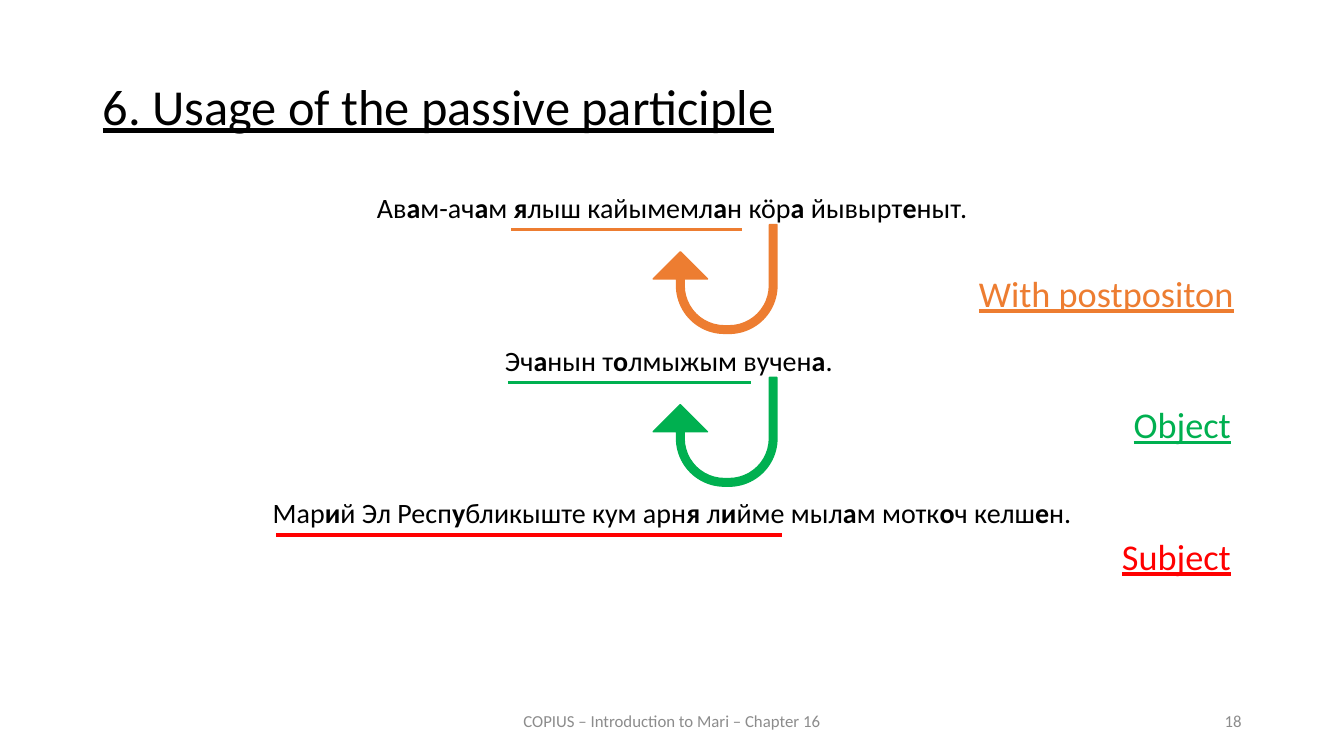
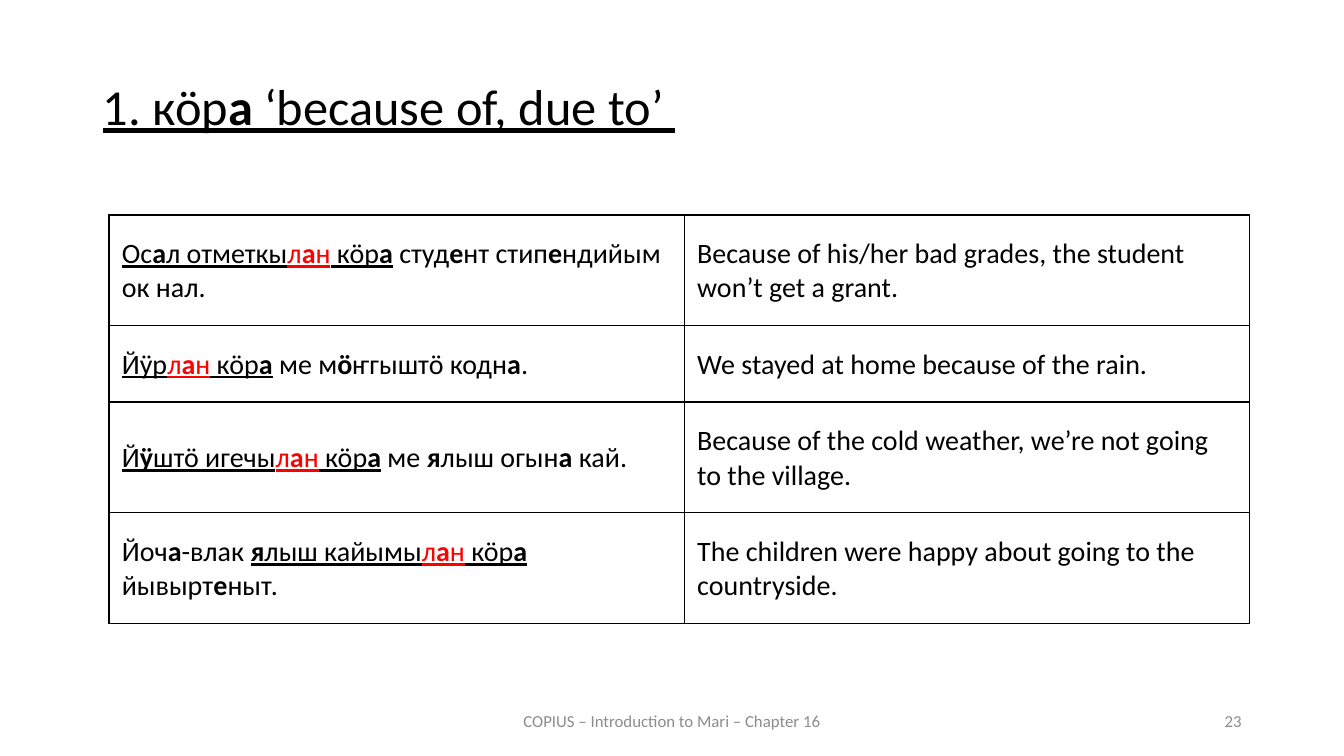
import itertools

import pptx
import pptx.dml.color
import pptx.enum.shapes
import pptx.enum.text
import pptx.oxml
import pptx.oxml.ns
import pptx.util
from pptx.util import Cm

RGBColor = pptx.dml.color.RGBColor
Align = pptx.enum.text.PP_ALIGN
Anchor = pptx.enum.text.MSO_ANCHOR

BLACK = RGBColor(0x00, 0x00, 0x00)
GREY = RGBColor(0x8C, 0x8C, 0x8C)
ORANGE = RGBColor(0xED, 0x7D, 0x31)
GREEN = RGBColor(0x00, 0xB0, 0x50)
RED = RGBColor(0xFF, 0x00, 0x00)

FONT = "Calibri"
SLIDE_WIDTH, SLIDE_HEIGHT = 33.87, 19.05
FOOTER = "COPIUS – Introduction to Mari – Chapter 16"
MARKS = "*_^"


def write_text(frame, text, *, size=20, color=BLACK, align=Align.LEFT,
               underline=False, line_spacing=None):
    """Fill a frame; * toggles bold, _ underline and ^ red."""
    paragraph = frame.paragraphs[0]
    paragraph.alignment = align
    if line_spacing:
        paragraph.line_spacing = line_spacing
    active = set()
    for is_mark, group in itertools.groupby(text, key=lambda c: c in MARKS):
        if is_mark:
            active ^= set(group)
            continue
        run = paragraph.add_run()
        run.text = "".join(group)
        run.font.name = FONT
        run.font.size = pptx.util.Pt(size)
        run.font.bold = "*" in active
        run.font.underline = underline or "_" in active
        run.font.color.rgb = RED if "^" in active else color


class Deck:
    def __init__(self):
        self.presentation = pptx.Presentation()
        self.presentation.slide_width = Cm(SLIDE_WIDTH)
        self.presentation.slide_height = Cm(SLIDE_HEIGHT)
        self.slide = None

    def new_slide(self, title, number):
        """Start a slide with the shared title and footer."""
        self.slide = self.presentation.slides.add_slide(
            self.presentation.slide_layouts[6])
        self.text(title, 2.34, 1.93, 29.21, 2.1, size=36, underline=True,
                  align=Align.JUSTIFY, line_spacing=0.9)
        footer = dict(size=12, color=GREY, anchor=Anchor.MIDDLE)
        self.text(FOOTER, 11.22, 17.65, 11.43, 1.02, align=Align.CENTER, **footer)
        self.text(str(number), 23.92, 17.65, 7.62, 1.02, align=Align.RIGHT, **footer)

    def text(self, text, left, top, width, height, *, anchor=Anchor.TOP, **style):
        box = self.slide.shapes.add_textbox(Cm(left), Cm(top), Cm(width), Cm(height))
        box.text_frame.word_wrap = True
        box.text_frame.vertical_anchor = anchor
        write_text(box.text_frame, text, **style)

    def underline(self, start, end, y, color):
        rule = self.slide.shapes.add_connector(
            pptx.enum.shapes.MSO_CONNECTOR.STRAIGHT, Cm(start), Cm(y), Cm(end), Cm(y))
        rule.line.color.rgb = color
        rule.line.width = pptx.util.Pt(2.25)
        rule._element.spPr.append(pptx.oxml.parse_xml(
            f"<a:effectLst {pptx.oxml.ns.nsdecls('a')}/>"))

    def return_arrow(self, left, top, color):
        arrow = self.slide.shapes.add_shape(
            pptx.enum.shapes.MSO_SHAPE.U_TURN_ARROW,
            Cm(left), Cm(top), Cm(3.12), Cm(2.74))
        for index, value in enumerate((0.07, 0.25, 0.25, 0.44, 0.75)):
            arrow.adjustments[index] = value
        arrow.rotation = 180
        arrow.shadow.inherit = False
        arrow.fill.solid()
        arrow.fill.fore_color.rgb = color
        arrow.line.color.rgb = color
        arrow.line.width = pptx.util.Pt(1)

    def table(self, rows, left, top, widths, heights):
        table = self.slide.shapes.add_table(
            len(rows), len(widths), Cm(left), Cm(top),
            Cm(sum(widths)), Cm(sum(heights))).table
        table.first_row = table.horz_banding = False
        for column, width in zip(table.columns, widths):
            column.width = Cm(width)
        for row, height in zip(table.rows, heights):
            row.height = Cm(height)
        last_row, last_column = len(rows) - 1, len(widths) - 1
        for r, row in enumerate(rows):
            for c, text in enumerate(row):
                cell = table.cell(r, c)
                cell.fill.background()
                cell.vertical_anchor = Anchor.MIDDLE
                cell.margin_left = cell.margin_right = Cm(0.33)
                cell.margin_top, cell.margin_bottom = Cm(0.05), Cm(0)
                write_text(cell.text_frame, text)
                self.borders(cell, L=c == 0, R=c == last_column,
                             T=r == 0, B=r == last_row)

    def borders(self, cell, **outer_sides):
        """Draw outer sides at 1.5 pt and inner ones at 1 pt."""
        properties = cell._tc.get_or_add_tcPr()
        for index, (side, is_outer) in enumerate(outer_sides.items()):
            width = pptx.util.Pt(1.5 if is_outer else 1)
            properties.insert(index, pptx.oxml.parse_xml(
                f"<a:ln{side} {pptx.oxml.ns.nsdecls('a')} w='{width}'>"
                f"<a:solidFill><a:srgbClr val='{BLACK}'/></a:solidFill></a:ln{side}>"))


def participle_slide(deck):
    deck.new_slide("6. Usage of the passive participle", 18)

    # Example sentences: text, box width, underline start and end, colour
    sentences = [
        ("Ав*а*м-ач*а*м *я*лыш кайымемл*а*н кӧр*а *йывырт*е*ныт.",
         16.92, 12.88, 18.69, ORANGE),
        ("Эч*а*нын т*о*лмыжым вучен*а*. ", 16.92, 12.8, 18.92, GREEN),
        ("Мар*и*й Эл Респ*у*бликыште кум арн*я *л*и*йме мыл*а*м мотк*о*ч келш*е*н.",
         22.96, 6.96, 19.71, RED),
    ]
    for index, (sentence, width, start, end, color) in enumerate(sentences):
        top = 4.67 + 3.85 * index
        deck.text(sentence, (SLIDE_WIDTH - width) / 2, top, width, 1.11,
                  align=Align.CENTER)
        deck.underline(start, end, top + 1.11, color)
        if color != RED:
            deck.return_arrow(16.46, top + 0.99, color)

    # Role of each participle: text, right edge, box width, colour
    roles = [("With postpositon", 31.34, 8.61, ORANGE),
             ("Object", 31.27, 3.35, GREEN),
             ("Subject", 31.27, 3.66, RED)]
    for index, (role, right, width, color) in enumerate(roles):
        deck.text(role, right - width, 7.01 + 3.31 * index, width, 1.12,
                  size=25.9, color=color, underline=True, align=Align.RIGHT,
                  line_spacing=0.7)


def postposition_slide(deck):
    deck.new_slide("1. кӧр*а* ‘because of, due to’ ", 23)

    # Examples with translations
    examples = [
        ("_Ос*а*л отметкы^л*а*н^ кӧр*а*_ студ*е*нт стип*е*ндийым ок нал.",
         "Because of his/her bad grades, the student won’t get a grant."),
        ("_Йӱр^л*а*н^ кӧр*а*_ ме м*ӧ*ҥгыштӧ кодн*а*.",
         "We stayed at home because of the rain."),
        ("_Й*ӱ*штӧ игечы^л*а*н^ кӧр*а*_ ме *я*лыш огын*а* кай.",
         "Because of the cold weather, we’re not going to the village."),
        ("Йоч*а*-влак _*я*лыш кайымы^л*а*н^ кӧр*а*_ йывырт*е*ныт.",
         "The children were happy about going to the countryside."),
    ]
    deck.table(examples, 2.74, 5.41, (14.5, 14.25), (2.79, 1.93, 2.79, 2.79))


def main():
    deck = Deck()
    participle_slide(deck)
    postposition_slide(deck)
    deck.presentation.save("out.pptx")


if __name__ == "__main__":
    main()
